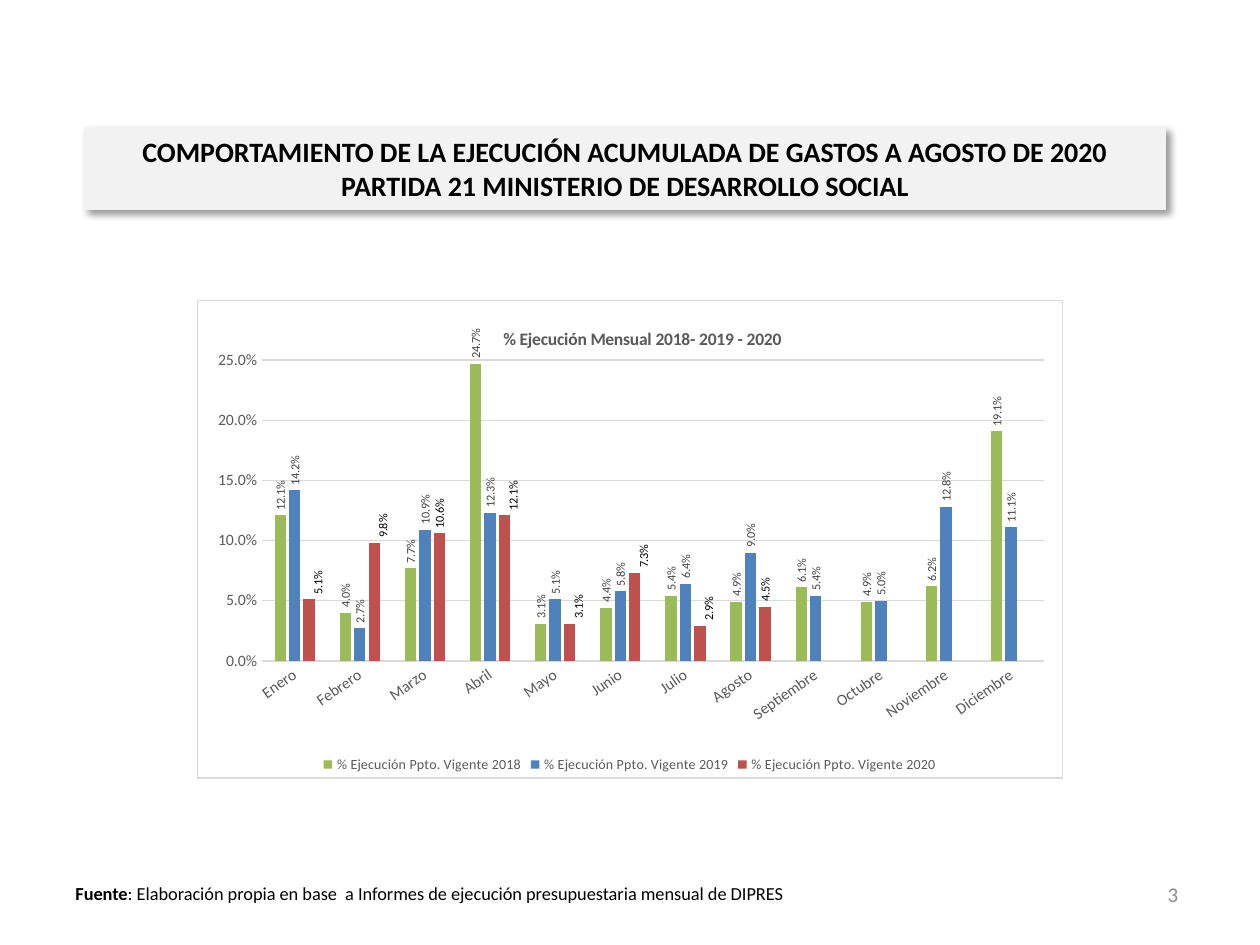
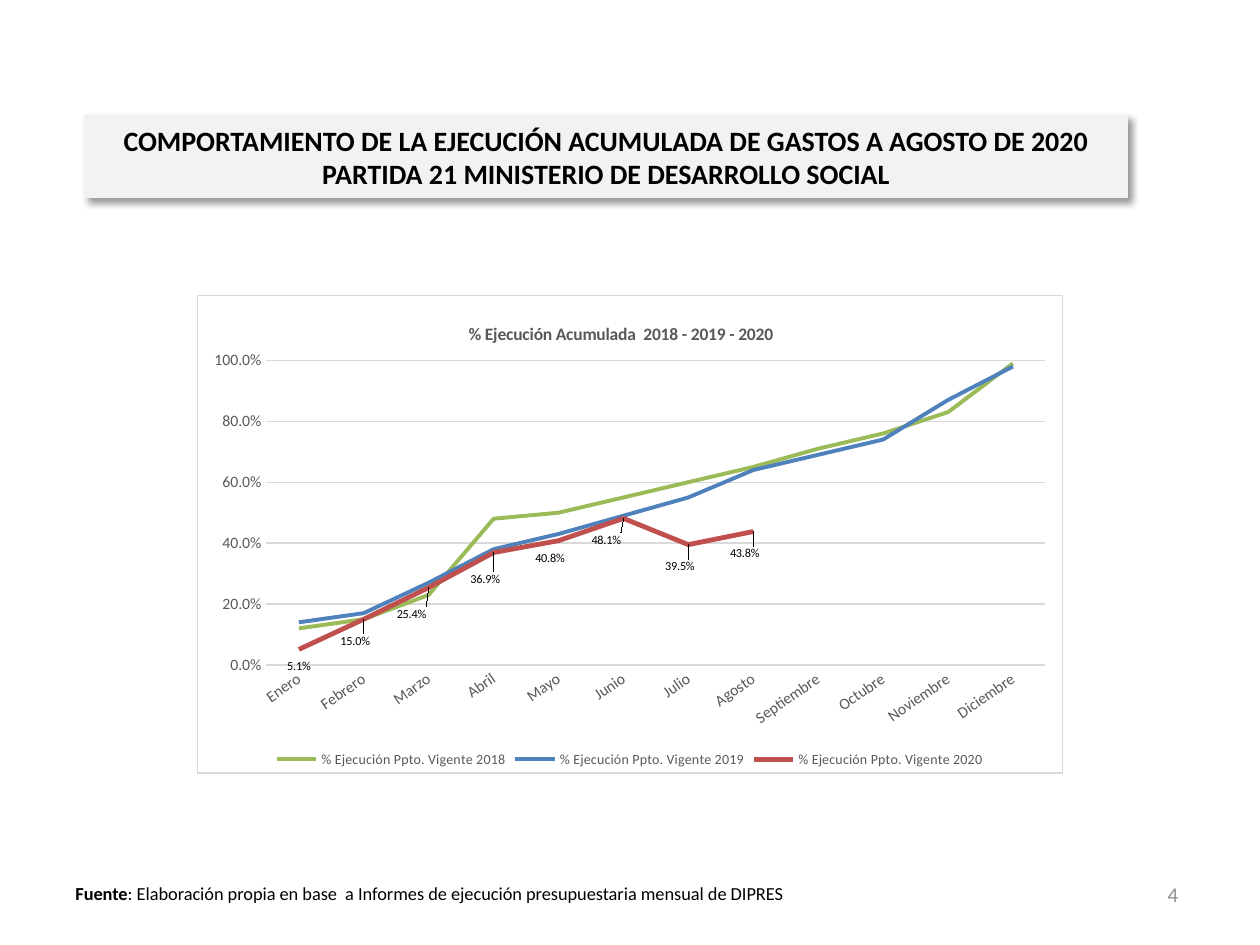
import copy

import pptx
import pptx.chart.data
import pptx.dml.color
import pptx.enum.chart
import pptx.enum.shapes
import pptx.enum.text
import pptx.oxml
import pptx.oxml.ns
import pptx.util

Inches = pptx.util.Inches
Pt = pptx.util.Pt
RGBColor = pptx.dml.color.RGBColor
ChartType = pptx.enum.chart.XL_CHART_TYPE
LabelPosition = pptx.enum.chart.XL_LABEL_POSITION
Align = pptx.enum.text.PP_ALIGN
Anchor = pptx.enum.text.MSO_ANCHOR

BLACK = RGBColor(0x00, 0x00, 0x00)
WHITE = RGBColor(0xFF, 0xFF, 0xFF)
BAND = RGBColor(0xF2, 0xF2, 0xF2)
GRID = RGBColor(0xD9, 0xD9, 0xD9)
AXIS_TEXT = RGBColor(0x59, 0x59, 0x59)
LABEL_TEXT = RGBColor(0x40, 0x40, 0x40)
PAGE_NUMBER = RGBColor(0x8C, 0x8C, 0x8C)
GREEN = RGBColor(0x9B, 0xBB, 0x59)
BLUE = RGBColor(0x4F, 0x81, 0xBD)
RED = RGBColor(0xC0, 0x50, 0x4D)

FONT = "Calibri"
PERCENT = "0.0%"
YEAR_COLORS = {2018: GREEN, 2019: BLUE, 2020: RED}
MONTHS = ["Enero", "Febrero", "Marzo", "Abril", "Mayo", "Junio", "Julio",
          "Agosto", "Septiembre", "Octubre", "Noviembre", "Diciembre"]
HEADING = ("COMPORTAMIENTO DE LA EJECUCIÓN ACUMULADA DE GASTOS A AGOSTO DE 2020\n"
           "PARTIDA 21 MINISTERIO DE DESARROLLO SOCIAL")
SOURCE = ": Elaboración propia en base  a Informes de ejecución presupuestaria mensual de DIPRES"

MONTHLY = {
    2018: [0.121, 0.04, 0.077, 0.247, 0.031, 0.044, 0.054, 0.049, 0.061, 0.049, 0.062, 0.191],
    2019: [0.142, 0.027, 0.109, 0.123, 0.051, 0.058, 0.064, 0.09, 0.054, 0.05, 0.128, 0.111],
    2020: [0.051, 0.098, 0.106, 0.121, 0.031, 0.073, 0.029, 0.045],
}
ACCUMULATED = {
    2018: [0.12, 0.15, 0.23, 0.48, 0.5, 0.55, 0.6, 0.65, 0.71, 0.76, 0.83, 0.99],
    2019: [0.14, 0.17, 0.27, 0.38, 0.43, 0.49, 0.55, 0.64, 0.69, 0.74, 0.87, 0.98],
    2020: [0.051, 0.15, 0.254, 0.369, 0.408, 0.481, 0.395, 0.438],
}
MONTHLY_SHIFTS = {0: (0.01, 0), 1: (0.01, 0), 3: (0.01, 0),
                  4: (0.01, 0), 5: (0.01, 0), 6: (0.01, 0)}
ACCUMULATED_SHIFTS = dict(enumerate([
    (0, 0.01), (-0.01, 0.02), (-0.02, 0.03), (-0.01, 0.03),
    (-0.01, 0.01), (-0.02, 0.02), (-0.01, 0.02), (-0.01, 0.02)]))


def parse_xml(tag, content, attributes=""):
    """Build an element with the chart and drawing namespaces declared."""
    namespaces = pptx.oxml.ns.nsdecls("a", "c")
    return pptx.oxml.parse_xml(f"<{tag} {namespaces} {attributes}>{content}</{tag}>")


def format_font(font, size, color, bold=False):
    """Set the shared typeface with a size, colour and weight."""
    font.name = FONT
    font.size = Pt(size)
    font.bold = bold
    font.color.rgb = color


def add_text(paragraph, text, size=12, color=BLACK, bold=False, align=None):
    """Append text to a paragraph, with a line break at each newline."""
    paragraph.alignment = align
    for index, line in enumerate(text.split("\n")):
        if index:
            paragraph.add_line_break()
        run = paragraph.add_run()
        run.text = line
        format_font(run.font, size, color, bold)


def add_text_box(slide, box, anchor=Anchor.TOP):
    """Add a wrapping text box and return its first paragraph."""
    frame = slide.shapes.add_textbox(*map(Inches, box)).text_frame
    frame.word_wrap = True
    frame.vertical_anchor = anchor
    return frame.paragraphs[0]


def add_footer(slide, number):
    """Add the source line and the page number."""
    source = add_text_box(slide, (0.5, 6.95, 5.91, 0.28))
    add_text(source, "Fuente", size=10.5, bold=True)
    add_text(source, SOURCE, size=10.5)
    page = add_text_box(slide, (7.12, 6.9, 2.33, 0.4), Anchor.MIDDLE)
    add_text(page, str(number), color=PAGE_NUMBER, align=Align.RIGHT)


def add_heading_band(slide, box):
    """Add the shaded heading band with its soft shadow."""
    band = slide.shapes.add_shape(pptx.enum.shapes.MSO_SHAPE.RECTANGLE, *map(Inches, box))
    band.fill.solid()
    band.fill.fore_color.rgb = BAND
    band.line.color.rgb = BAND
    band.line.width = Pt(0.75)
    band.shadow.inherit = False
    effects = band._element.spPr.find(pptx.oxml.ns.qn("a:effectLst"))
    effects.append(parse_xml(
        "a:outerShdw",
        '<a:srgbClr val="000000"><a:alpha val="40000"/></a:srgbClr>',
        f'blurRad="{Pt(4)}" dist="{Pt(3)}" dir="2700000" algn="tl" rotWithShape="0"'))
    band.text_frame.word_wrap = True
    band.text_frame.vertical_anchor = Anchor.MIDDLE
    add_text(band.text_frame.paragraphs[0], HEADING, size=16, bold=True, align=Align.CENTER)


def set_layout(parent, index, inner=False, **fractions):
    """Place a chart part by fractions of the chart's size."""
    for old in parent.xpath("./c:layout"):
        parent.remove(old)
    content = '<c:layoutTarget val="inner"/>' if inner else ""
    if "w" in fractions:
        content += '<c:xMode val="edge"/><c:yMode val="edge"/>'
    elif parent.tag == pptx.oxml.ns.qn("c:title"):
        content += '<c:xMode val="edge"/><c:yMode val="edge"/>'
    content += "".join(f'<c:{key} val="{value}"/>' for key, value in fractions.items())
    parent.insert(index, parse_xml("c:layout", f"<c:manualLayout>{content}</c:manualLayout>"))


def rotate_text(text_body, degrees):
    """Turn the text of a chart part."""
    body = text_body.find(pptx.oxml.ns.qn("a:bodyPr"))
    body.set("rot", str(degrees * 60000))
    body.set("vert", "horz")


def format_axes(chart, maximum, step, line_width):
    """Format both axes, the grid and the legend."""
    for axis in (chart.category_axis, chart.value_axis):
        axis.major_tick_mark = pptx.enum.chart.XL_TICK_MARK.NONE
        axis.minor_tick_mark = pptx.enum.chart.XL_TICK_MARK.NONE
        format_font(axis.tick_labels.font, 9, AXIS_TEXT)
    rotate_text(chart._chartSpace.xpath(".//c:catAx/c:txPr")[0], -35)
    chart.category_axis.format.line.color.rgb = GRID
    chart.category_axis.format.line.width = Pt(line_width)
    values = chart.value_axis
    values.minimum_scale, values.maximum_scale, values.major_unit = 0, maximum, step
    values.format.line.fill.background()
    values.tick_labels.number_format = PERCENT
    values.tick_labels.number_format_is_linked = False
    values.has_major_gridlines = True
    values.major_gridlines.format.line.color.rgb = GRID
    values.major_gridlines.format.line.width = Pt(0.75)
    chart.has_legend = True
    chart.legend.position = pptx.enum.chart.XL_LEGEND_POSITION.BOTTOM
    chart.legend.include_in_layout = False
    format_font(chart.legend.font, 8, AXIS_TEXT)


def add_year_chart(slide, box, chart_type, title, years, title_at, plot_at):
    """Add a chart of the three years with its frame and title."""
    data = pptx.chart.data.CategoryChartData(number_format=PERCENT)
    data.categories = MONTHS
    for year, values in years.items():
        padding = [None] * (len(MONTHS) - len(values))
        data.add_series(f"% Ejecución Ppto. Vigente {year}", values + padding)
    chart = slide.shapes.add_chart(chart_type, *map(Inches, box), data).chart
    format_font(chart.font, 10, BLACK)
    chart.plots[0].vary_by_categories = False
    chart.has_title = True
    add_text(chart.chart_title.text_frame.paragraphs[0], title,
             size=10, color=AXIS_TEXT, bold=True)
    space = chart._chartSpace
    set_layout(space.xpath("./c:chart/c:title")[0], 1, **title_at)
    set_layout(space.xpath("./c:chart/c:plotArea")[0], 0, inner=True, **plot_at)
    space.xpath("./c:chart")[0].addnext(parse_xml(
        "c:spPr",
        f'<a:solidFill><a:srgbClr val="{WHITE}"/></a:solidFill>'
        f'<a:ln w="{Pt(0.75)}"><a:solidFill><a:srgbClr val="{GRID}"/></a:solidFill></a:ln>'))
    return chart


def label_series(series, position, color, shifts, angle=0):
    """Show the values of a series, moving single labels by their shifts."""
    labels = series.data_labels
    labels.show_value = True
    labels.number_format = PERCENT
    labels.number_format_is_linked = False
    labels.position = position
    format_font(labels.font, 7, color)
    element = series._element.xpath("./c:dLbls")[0]
    rotate_text(element.xpath("./c:txPr")[0], angle)
    shared = element.xpath("./*[not(self::c:showLeaderLines)]")
    for order, (point, (x, y)) in enumerate(shifts.items()):
        label = parse_xml("c:dLbl", f'<c:idx val="{point}"/>')
        label.extend(copy.deepcopy(part) for part in shared)
        set_layout(label, 1, x=x, y=y)
        element.insert(order, label)


def build_monthly_slide(slide):
    """Build the slide of monthly spending in columns."""
    add_footer(slide, 3)
    add_heading_band(slide, (0.67, 1.01, 8.58, 0.65))
    chart = add_year_chart(
        slide, (1.56, 2.38, 6.88, 3.8), ChartType.COLUMN_CLUSTERED,
        "% Ejecución Mensual 2018- 2019 - 2020", MONTHLY,
        dict(x=0.35, y=0.05), dict(x=0.075, y=0.125, w=0.903, h=0.63))
    format_axes(chart, maximum=0.25, step=0.05, line_width=0.75)
    chart.plots[0].gap_width = 219
    chart.plots[0].overlap = -27
    for series, (year, color) in zip(chart.plots[0].series, YEAR_COLORS.items()):
        series.format.fill.solid()
        series.format.fill.fore_color.rgb = color
        series.invert_if_negative = False
        current = year == 2020
        label_series(series, LabelPosition.OUTSIDE_END,
                     BLACK if current else LABEL_TEXT,
                     MONTHLY_SHIFTS if current else {}, angle=-90)


def build_accumulated_slide(slide):
    """Build the slide of accumulated spending in lines."""
    add_footer(slide, 4)
    add_heading_band(slide, (0.67, 0.92, 8.28, 0.65))
    chart = add_year_chart(
        slide, (1.56, 2.34, 6.88, 3.8), ChartType.LINE,
        "% Ejecución Acumulada  2018 - 2019 - 2020", ACCUMULATED,
        dict(x=0.31, y=0.05), dict(x=0.08, y=0.136, w=0.9, h=0.638))
    format_axes(chart, maximum=1, step=0.2, line_width=1)
    for series, (year, color) in zip(chart.plots[0].series, YEAR_COLORS.items()):
        series.smooth = False
        series.marker.style = pptx.enum.chart.XL_MARKER_STYLE.NONE
        series.format.line.color.rgb = color
        series.format.line.width = Pt(2.75 if year == 2020 else 2.25)
    label_series(chart.plots[0].series[2], LabelPosition.BELOW, BLACK, ACCUMULATED_SHIFTS)


def main():
    """Build and save the presentation."""
    presentation = pptx.Presentation()
    presentation.slide_width = Inches(10)
    presentation.slide_height = Inches(7.5)
    for build in (build_monthly_slide, build_accumulated_slide):
        build(presentation.slides.add_slide(presentation.slide_layouts[6]))
    presentation.save("out.pptx")


if __name__ == "__main__":
    main()
